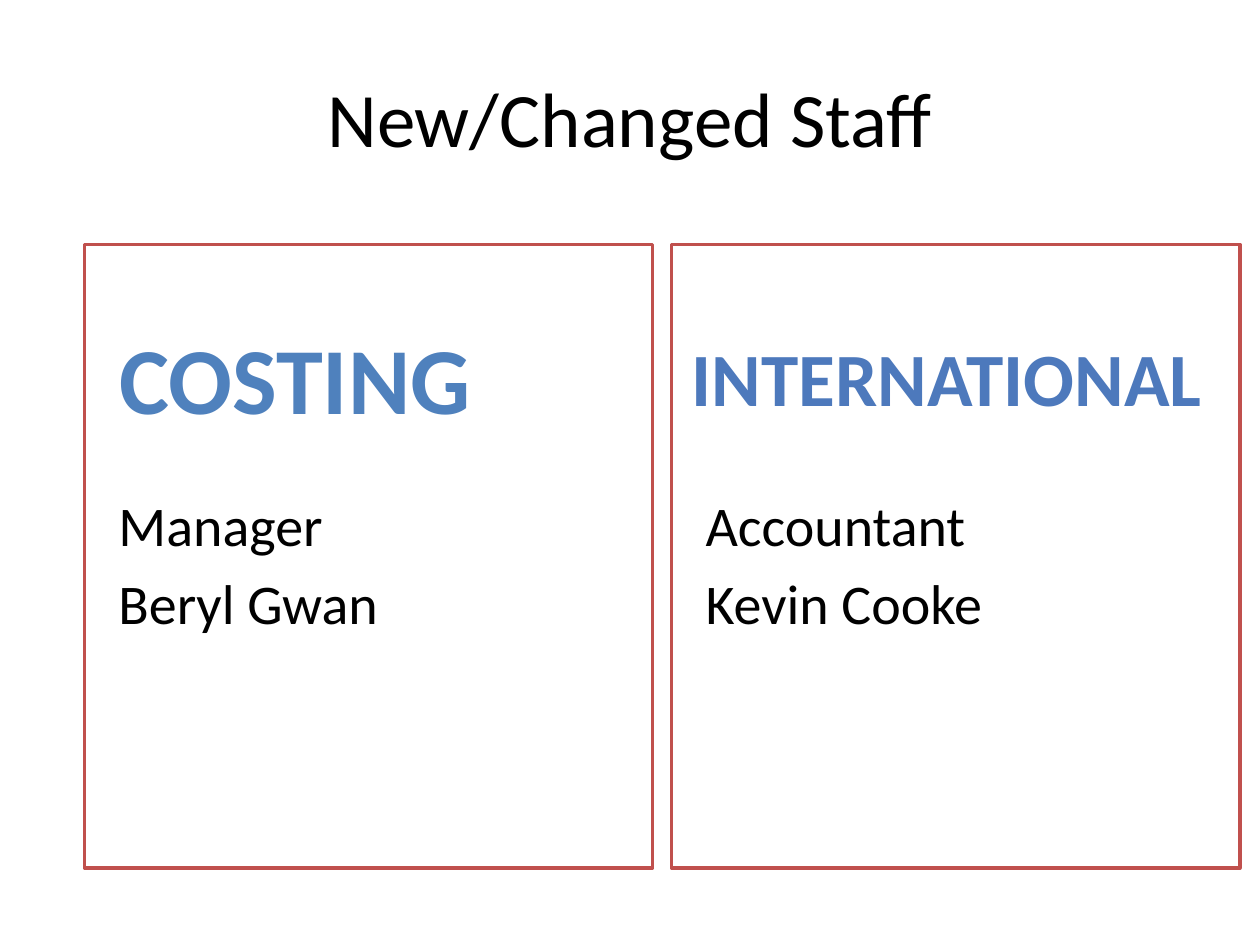
"""Build the New/Changed Staff slide with one framed panel per department."""
from pptx import Presentation
from pptx.dml.color import RGBColor
from pptx.enum import shapes, text
from pptx.util import Inches, Pt

TITLE = "New/Changed Staff"
PANELS = [
    {"lines": ["Manager", "Beryl Gwan"], "heading": "COSTING",
     "box": (0.83, 2.49, 3.02, 1.01), "size": 54, "color": "4F81BD"},
    {"lines": ["Accountant", "Kevin Cooke"], "heading": "INTERNATIONAL",
     "box": (5.33, 2.58, 4.37, 0.82), "size": 43, "color": "4D79BC"},
]
LEFT, TOP, WIDTH, HEIGHT, GAP = 0.67, 1.94, 4.51, 4.95, 0.15
BLACK, WHITE, RED = "000000", "FFFFFF", "C0504D"


def rgb(value):
    return RGBColor.from_string(value)


def write(tf, lines, size, color=BLACK, bold=False, align=text.PP_ALIGN.CENTER,
          anchor=text.MSO_ANCHOR.TOP, wrap=True, before=0):
    tf.word_wrap = wrap
    tf.vertical_anchor = anchor
    for i, line in enumerate(lines):
        p = tf.add_paragraph() if i else tf.paragraphs[0]
        p.alignment = align
        p.space_before = Pt(before if i else 0)
        r = p.add_run()
        r.text = line
        r.font.name = "Calibri"
        r.font.size = Pt(size)
        r.font.bold = bold
        r.font.color.rgb = rgb(color)


def add_text(s, box, line, size, **style):
    sp = s.shapes.add_textbox(*map(Inches, box))
    write(sp.text_frame, [line], size, **style)


def add_panel(s, left, lines):
    sp = s.shapes.add_shape(shapes.MSO_SHAPE.RECTANGLE,
                            *map(Inches, (left, TOP, WIDTH, HEIGHT)))
    sp.shadow.inherit = False
    sp.fill.solid()
    sp.fill.fore_color.rgb = rgb(WHITE)
    sp.line.color.rgb = rgb(RED)
    sp.line.width = Pt(2)
    tf = sp.text_frame
    tf.margin_left, tf.margin_top = Inches(0.27), Inches(1.95)
    write(tf, lines, 32, align=text.PP_ALIGN.LEFT, before=6.4)


def main():
    prs = Presentation()
    prs.slide_width, prs.slide_height = Inches(10), Inches(7.5)
    s = prs.slides.add_slide(prs.slide_layouts[6])
    add_text(s, (0.5, 0.3, 9, 1.25), TITLE, 44, anchor=text.MSO_ANCHOR.MIDDLE)
    for i, panel in enumerate(PANELS):
        add_panel(s, LEFT + i * (WIDTH + GAP), panel["lines"])
        add_text(s, panel["box"], panel["heading"], panel["size"],
                 color=panel["color"], bold=True, wrap=False)
    prs.save("out.pptx")


if __name__ == "__main__":
    main()
